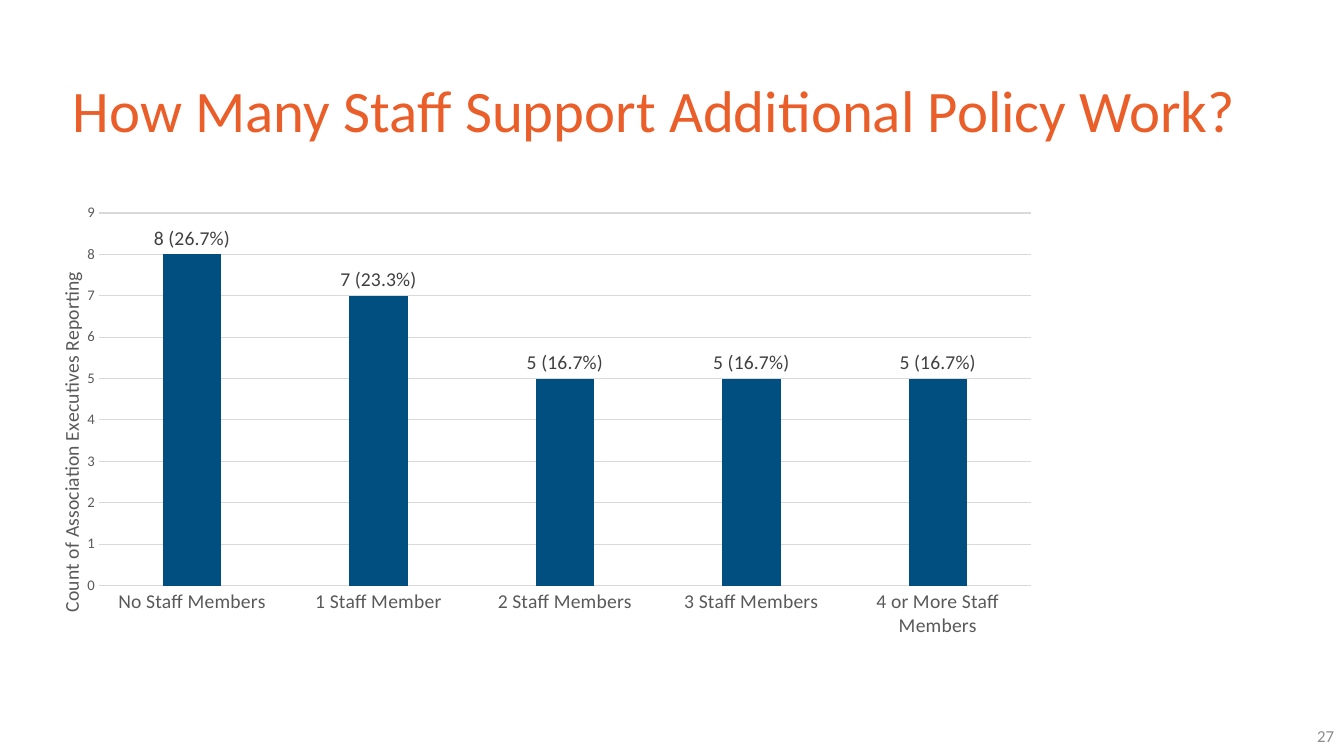
import dataclasses

import lxml.etree
import pptx
import pptx.chart.data
import pptx.dml.color
import pptx.enum.chart
import pptx.enum.text
import pptx.oxml.ns
import pptx.util

EMU_PER_PX = 914400 / 100.8
FONT = "Calibri"
ORANGE, BLUE = "EA5E29", "014F80"
GRID_GRAY, AXIS_GRAY, LABEL_GRAY, NUMBER_GRAY = "D9D9D9", "595959", "404040", "8C8C8C"


@dataclasses.dataclass
class TextItem:
    text: str
    box: tuple[int, int, int, int]
    size: float
    color: str
    alignment: pptx.enum.text.PP_ALIGN
    line_spacing: float = 1.0


@dataclasses.dataclass
class StaffCount:
    category: str
    count: int
    label: str


TEXTS = [
    TextItem("How Many Staff Support Additional Policy Work?", (63, 40, 1220, 146),
             42, ORANGE, pptx.enum.text.PP_ALIGN.LEFT, 0.9),
    TextItem("27", (1041, 716, 303, 40), 12, NUMBER_GRAY, pptx.enum.text.PP_ALIGN.RIGHT),
]
STAFF_COUNTS = [
    StaffCount("No Staff Members", 8, "8 (26.7%)"),
    StaffCount("1 Staff Member", 7, "7 (23.3%)"),
    StaffCount("2 Staff Members", 5, "5 (16.7%)"),
    StaffCount("3 Staff Members", 5, "5 (16.7%)"),
    StaffCount("4 or More Staff Members", 5, "5 (16.7%)"),
]


def px(value: int) -> int:
    return round(value * EMU_PER_PX)


def rgb(value: str) -> pptx.dml.color.RGBColor:
    return pptx.dml.color.RGBColor.from_string(value)


def style_font(font, size: float, color: str) -> None:
    font.name = FONT
    font.size = pptx.util.Pt(size)
    font.bold = False
    font.color.rgb = rgb(color)


def style_line(line) -> None:
    line.color.rgb = rgb(GRID_GRAY)
    line.width = pptx.util.Pt(0.75)


def add_text(slide, item: TextItem) -> None:
    frame = slide.shapes.add_textbox(*map(px, item.box)).text_frame
    frame.word_wrap = True
    frame.vertical_anchor = pptx.enum.text.MSO_ANCHOR.MIDDLE
    paragraph = frame.paragraphs[0]
    paragraph.alignment = item.alignment
    paragraph.line_spacing = item.line_spacing
    run = paragraph.add_run()
    run.text = item.text
    style_font(run.font, item.size, item.color)


def set_layout(parent, index: int, settings: dict[str, str]) -> None:
    """Give a chart part a manual layout, as fractions of the chart."""
    tag = pptx.oxml.ns.qn
    for old_layout in parent.findall(tag("c:layout")):
        parent.remove(old_layout)
    layout = lxml.etree.Element(tag("c:layout"))
    manual = lxml.etree.SubElement(layout, tag("c:manualLayout"))
    for name, value in settings.items():
        lxml.etree.SubElement(manual, tag(f"c:{name}")).set("val", value)
    parent.insert(index, layout)


def add_staff_chart(slide) -> None:
    data = pptx.chart.data.CategoryChartData()
    data.categories = [item.category for item in STAFF_COUNTS]
    data.add_series("Series 1", [item.count for item in STAFF_COUNTS])
    chart = slide.shapes.add_chart(
        pptx.enum.chart.XL_CHART_TYPE.COLUMN_CLUSTERED,
        px(44), px(202), px(997), px(442), data).chart
    chart.has_legend = False
    chart.has_title = False
    style_font(chart.font, 14, "000000")

    # Axes
    category_axis, value_axis = chart.category_axis, chart.value_axis
    for axis, size in ((category_axis, 14), (value_axis, 10.5)):
        axis.major_tick_mark = pptx.enum.chart.XL_TICK_MARK.NONE
        axis.minor_tick_mark = pptx.enum.chart.XL_TICK_MARK.NONE
        style_font(axis.tick_labels.font, size, AXIS_GRAY)
    style_line(category_axis.format.line)
    value_axis.format.line.fill.background()
    value_axis.minimum_scale, value_axis.maximum_scale, value_axis.major_unit = 0, 9, 1
    style_line(value_axis.major_gridlines.format.line)

    # Value axis title
    frame = value_axis.axis_title.text_frame
    run = frame.paragraphs[0].add_run()
    run.text = "Count of Association Executives Reporting"
    style_font(run.font, 14, AXIS_GRAY)
    body = frame._txBody.bodyPr
    body.set("rot", "-5400000")
    body.set("vert", "horz")

    # Columns and their labels
    plot = chart.plots[0]
    plot.gap_width, plot.overlap = 219, -27
    plot.vary_by_categories = False
    series = plot.series[0]
    series.format.fill.solid()
    series.format.fill.fore_color.rgb = rgb(BLUE)
    outside = pptx.enum.chart.XL_LABEL_POSITION.OUTSIDE_END
    series.data_labels.show_value = True
    series.data_labels.position = outside
    style_font(series.data_labels.font, 14, LABEL_GRAY)
    for index, item in enumerate(STAFF_COUNTS):
        label = series.points[index].data_label
        label.text_frame.word_wrap = False
        run = label.text_frame.paragraphs[0].add_run()
        run.text = item.label
        style_font(run.font, 14, LABEL_GRAY)
        label.position = outside

    # Places of the plot area and the axis title
    chart_space = chart._chartSpace
    set_layout(chart_space.xpath(".//c:plotArea")[0], 0, {
        "layoutTarget": "inner", "xMode": "edge", "yMode": "edge",
        "x": "0.055", "y": "0.025", "w": "0.935", "h": "0.843"})
    set_layout(chart_space.xpath(".//c:valAx/c:title")[0], 1, {
        "xMode": "edge", "yMode": "edge", "x": "0.01", "y": "0.15"})


def main() -> None:
    presentation = pptx.Presentation()
    presentation.slide_width, presentation.slide_height = px(1344), px(756)
    slide = presentation.slides.add_slide(presentation.slide_layouts[6])
    for item in TEXTS:
        add_text(slide, item)
    add_staff_chart(slide)
    presentation.save("out.pptx")


if __name__ == "__main__":
    main()
